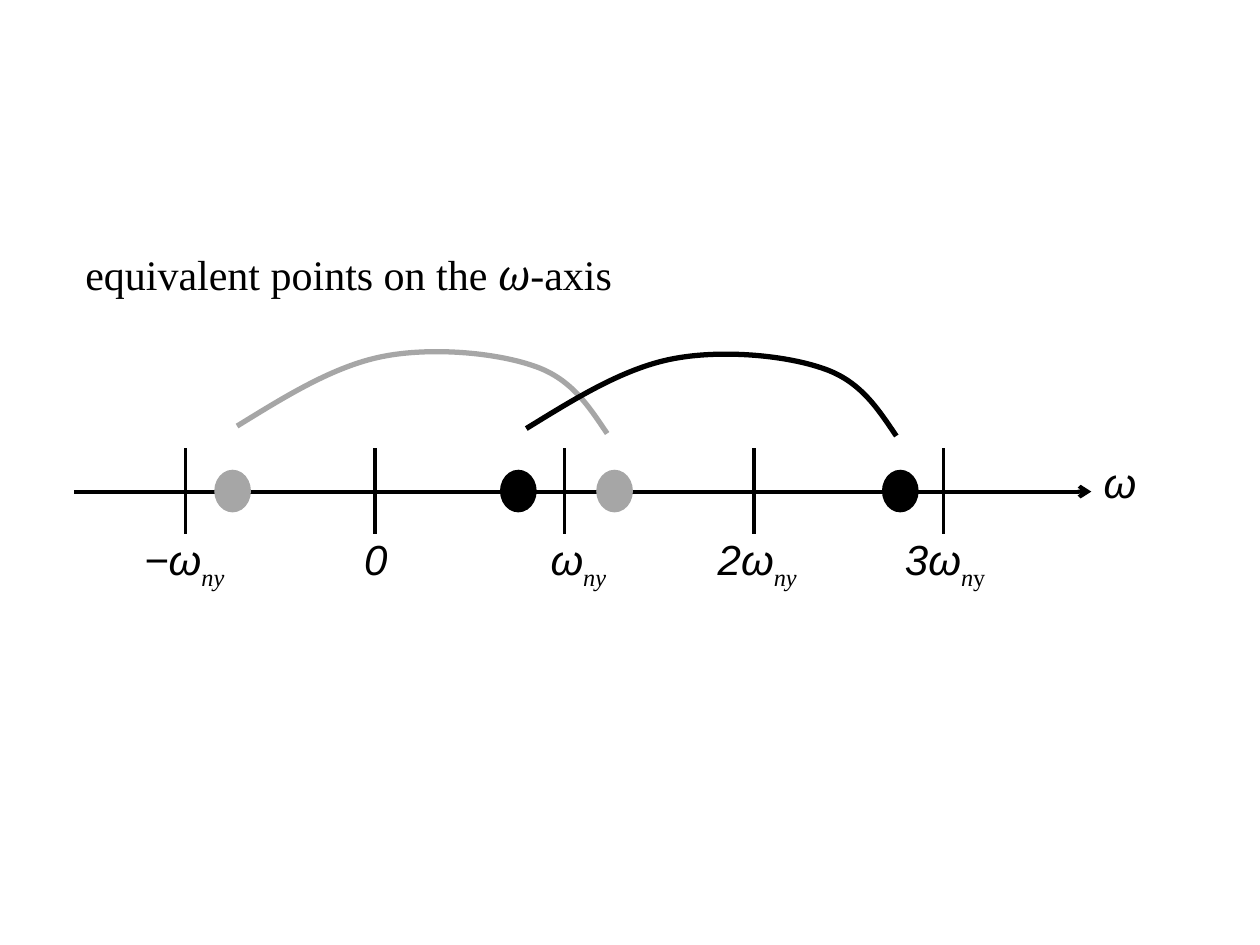
from lxml import etree
from pptx import Presentation
from pptx.dml.color import RGBColor
from pptx.enum.shapes import MSO_CONNECTOR, MSO_SHAPE
from pptx.enum.text import MSO_AUTO_SIZE, PP_ALIGN
from pptx.oxml.ns import qn
from pptx.util import Cm, Pt

STRAIGHT, OVAL = MSO_CONNECTOR.STRAIGHT, MSO_SHAPE.OVAL
FIT, LEFT, CENTER = MSO_AUTO_SIZE.SHAPE_TO_FIT_TEXT, PP_ALIGN.LEFT, PP_ALIGN.CENTER

THEME = {
    "black": RGBColor(0x00, 0x00, 0x00),
    "gray": RGBColor(0xA6, 0xA6, 0xA6),
    "text": Pt(24),
    "axis": Pt(2.25),
    "arc": Pt(3),
}

# Format values for each kind of text
SYMBOL = {"name": "Arial", "italic": True}
SUBSCRIPT = {"name": "Times New Roman", "italic": True}
PLAIN = {"name": "Times New Roman", "italic": False}
OMEGA = {"name": "Cambria", "italic": True}

deck = Presentation()
deck.slide_width, deck.slide_height = Cm(25.4), Cm(19.05)
page = deck.slides.add_slide(deck.slide_layouts[6])
diagram = page.shapes.add_group_shape().shapes


def add_line(x1, y1, x2, y2):
    line = diagram.add_connector(STRAIGHT, Cm(x1), Cm(y1), Cm(x2), Cm(y2))
    line.line.color.rgb = THEME["black"]
    line.line.width = THEME["axis"]
    etree.SubElement(line.element.spPr, qn("a:effectLst"))
    return line


def add_text(left, top, width, height, spans, align):
    box = diagram.add_textbox(Cm(left), Cm(top), Cm(width), Cm(height))
    box.text_frame.word_wrap = True
    box.text_frame.auto_size = FIT
    para = box.text_frame.paragraphs[0]
    para.alignment = align
    for text, style, baseline in spans:
        span = para.add_run()
        span.text = text
        span.font.size = THEME["text"]
        span.font.color.rgb = THEME["black"]
        for key, value in style.items():
            setattr(span.font, key, value)
        if baseline:
            span.font._element.set("baseline", str(baseline * 1000))


# Frequency axis with an open arrowhead
axis = add_line(1.5, 9.91, 22, 9.91)
etree.SubElement(axis.element.spPr.find(qn("a:ln")), qn("a:tailEnd"), type="arrow")

# Ticks at multiples of the Nyquist frequency
for index in range(5):
    x = 3.74 + 3.82 * index
    add_line(x, 9.04, x, 10.77)

# Axis name and tick labels
add_text(22, 9.07, 1.85, 2.06, [("ω", SYMBOL, 0)], LEFT)
ny = [("ny", SUBSCRIPT, -25)]
tick_labels = [
    (1.85, 3.73, "−ω", ny),
    (6.38, 2.39, "0", []),
    (10.24, 2.84, "ω", ny),
    (13.51, 3.51, "2ω", ny),
    (17.3, 3.51, "3ω", [("n", SUBSCRIPT, -25), ("y", PLAIN, -25)]),
]
for left, width, symbol, subscript in tick_labels:
    add_text(left, 10.64, width, 2.06, [(symbol, SYMBOL, 0)] + subscript, CENTER)

# Pairs of equivalent points, two Nyquist frequencies apart
for first, color in ((10.08, "black"), (4.32, "gray")):
    for left in (first, first + 7.7):
        dot = diagram.add_shape(OVAL, Cm(left), Cm(9.47), Cm(0.74), Cm(0.86))
        dot.shadow.inherit = False
        dot.fill.solid()
        dot.fill.fore_color.rgb = THEME[color]
        dot.line.fill.background()

# Arcs joining each pair: a start point, then three points per Bezier segment
ARC = [
    (4.78, 8.59),
    (5.74, 8), (6.71, 7.39), (7.7, 7.19),
    (8.69, 6.99), (9.98, 7.11), (10.74, 7.37),
    (11.51, 7.62), (11.86, 8.18), (12.24, 8.74),
]
for shift_x, shift_y, color in ((0, 0, "gray"), (5.83, 0.05, "black")):
    start, *points = [(Cm(x + shift_x), Cm(y + shift_y)) for x, y in ARC]
    outline = diagram.build_freeform(*start)
    outline.add_line_segments(points, close=False)
    arc = outline.convert_to_shape()
    arc.shadow.inherit = False
    arc.fill.background()
    arc.line.color.rgb = THEME[color]
    arc.line.width = THEME["arc"]
    # Turn each three straight segments into one cubic curve
    segments = list(arc.element.iter(qn("a:lnTo")))
    for index in range(0, len(segments), 3):
        curve = etree.SubElement(segments[index].getparent(), qn("a:cubicBezTo"))
        for segment in segments[index:index + 3]:
            curve.append(segment[0])
            segment.getparent().remove(segment)

# Heading
heading = [("equivalent points on the ", PLAIN, 0), ("ω", OMEGA, 0), ("-axis", PLAIN, 0)]
add_text(1.47, 4.88, 23.5, 2.18, heading, LEFT)

deck.save("out.pptx")
